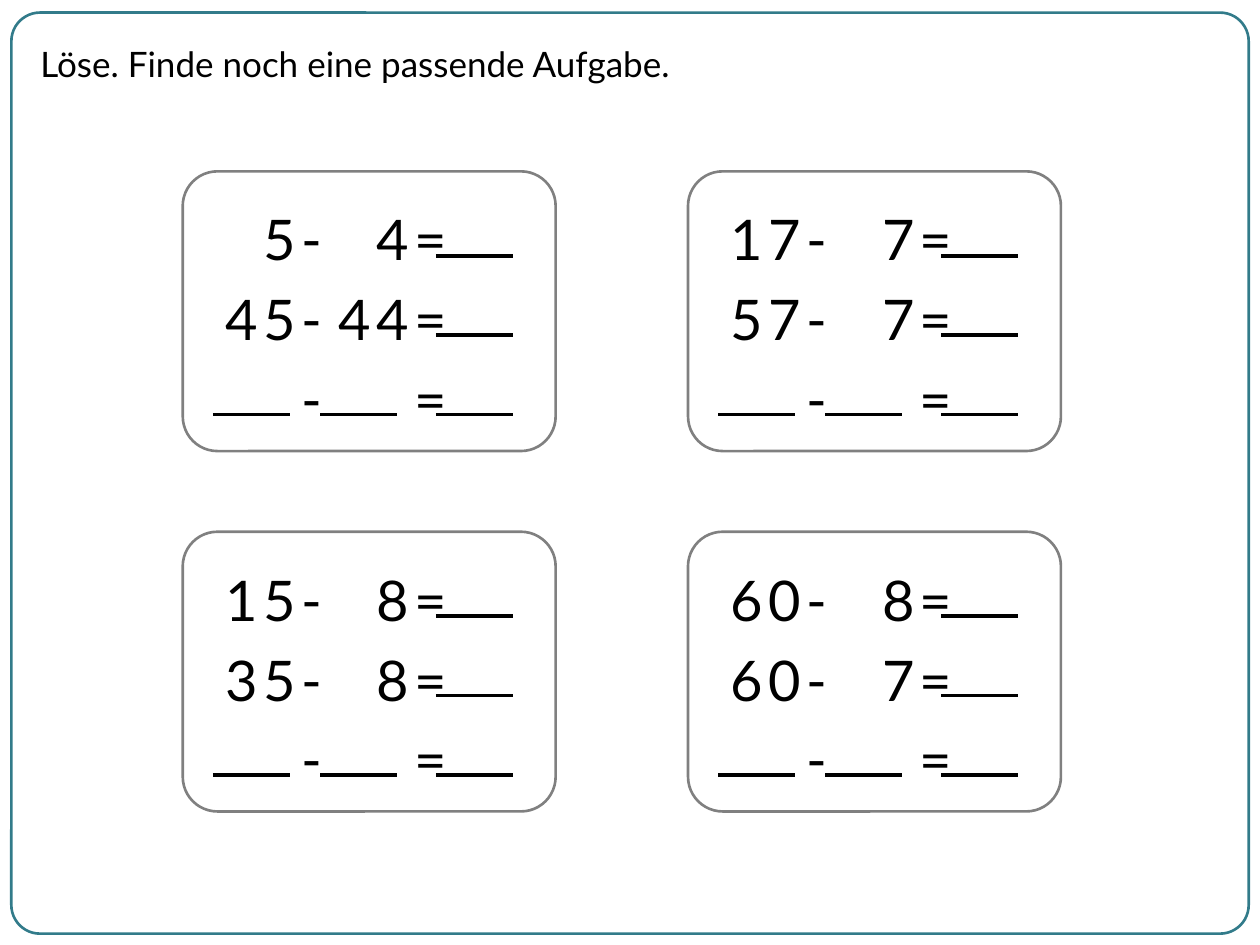
from dataclasses import dataclass

import pptx
import pptx.dml.color
import pptx.enum.shapes
import pptx.enum.text
import pptx.oxml
import pptx.util
from pptx.util import Inches


@dataclass(frozen=True)
class Theme:
    font: str = "Lato"
    ink: str = "000000"
    frame: str = "327B8A"
    card: str = "808080"
    title_size: int = 20
    digit_size: int = 32
    outline: float = 1.5
    blank_line: float = 2.25
    plain_table: str = "{2D5ABB26-0587-4C30-8999-92F81FD0307C}"


THEME = Theme()

# Card grid: table corners, and the two given tasks (minuend, subtrahend) of each card
LEFTS = (1.69, 5.7)
TOPS = (1.58, 4.44)
TASKS = (
    (((5, 4), (45, 44)), ((17, 7), (57, 7))),
    (((15, 8), (35, 8)), ((60, 8), (60, 7))),
)

# Measures within a card
COLUMNS, COLUMN_WIDTH = 8, 0.3
ROWS, ROW_HEIGHT = 3, 0.63
BLANK_WIDTH, BLANK_DROP = 0.61, 0.45
MINUEND_X, SUBTRAHEND_X, RESULT_X = 0, 0.85, 1.77
CARD_WIDTH, CARD_HEIGHT = 2.22, 2.96  # before the quarter turn


def color(code):
    return pptx.dml.color.RGBColor.from_string(code)


def write(text_frame, text, *, size, align):
    para = text_frame.paragraphs[0]
    para.alignment = align
    span = para.add_run()
    span.text = text
    span.font.name = THEME.font
    span.font.size = pptx.util.Pt(size)
    span.font.color.rgb = color(THEME.ink)


def add_title(slide, text):
    title = slide.shapes.title
    title.left, title.top = Inches(0.22), Inches(0.29)
    title.width, title.height = Inches(6.72), Inches(0.44)
    title.text_frame.word_wrap = True
    title.text_frame.auto_size = pptx.enum.text.MSO_AUTO_SIZE.SHAPE_TO_FIT_TEXT
    title.text_frame.vertical_anchor = pptx.enum.text.MSO_ANCHOR.TOP
    write(title.text_frame, text, size=THEME.title_size,
          align=pptx.enum.text.PP_ALIGN.LEFT)


def add_rounded_box(slide, left, top, width, height, *, line, radius, rotation=0):
    box = slide.shapes.add_shape(
        pptx.enum.shapes.MSO_SHAPE.ROUNDED_RECTANGLE,
        Inches(left), Inches(top), Inches(width), Inches(height))
    box.adjustments[0] = radius
    box.rotation = rotation
    box.shadow.inherit = False
    box.fill.background()
    box.line.color.rgb = color(line)
    box.line.width = pptx.util.Pt(THEME.outline)


def add_blank(slide, left, top):
    """Draw a line for the pupil to write on."""
    line = slide.shapes.add_connector(
        pptx.enum.shapes.MSO_CONNECTOR.STRAIGHT,
        Inches(left), Inches(top), Inches(left + BLANK_WIDTH), Inches(top))
    line.line.color.rgb = color(THEME.ink)
    line.line.width = pptx.util.Pt(THEME.blank_line)
    properties = line.element.spPr
    properties.append(properties.makeelement(pptx.oxml.ns.qn("a:effectLst"), {}))


def add_task_table(slide, left, top, tasks):
    frame = slide.shapes.add_table(
        ROWS, COLUMNS, Inches(left), Inches(top),
        Inches(COLUMNS * COLUMN_WIDTH), Inches(ROWS * ROW_HEIGHT))
    table = frame.table
    table.first_row = table.horz_banding = False
    style = table._tbl.tblPr.find(pptx.oxml.ns.qn("a:tableStyleId"))
    style.text = THEME.plain_table
    for column in table.columns:
        column.width = Inches(COLUMN_WIDTH)

    # One sign per cell; the last row leaves both numbers open
    for row, (minuend, subtrahend) in enumerate((*tasks, ("", ""))):
        signs = f"{minuend:>2}-{subtrahend:>2}=".ljust(COLUMNS)
        for column, sign in enumerate(signs):
            cell = table.cell(row, column)
            cell.fill.background()
            cell.vertical_anchor = pptx.enum.text.MSO_ANCHOR.MIDDLE
            if sign != " ":
                write(cell.text_frame, sign, size=THEME.digit_size,
                      align=pptx.enum.text.PP_ALIGN.CENTER)


def add_card(slide, left, top, tasks):
    add_task_table(slide, left, top, tasks)
    add_rounded_box(slide, left + 0.13, top - 0.59, CARD_WIDTH, CARD_HEIGHT,
                    line=THEME.card, radius=0.124, rotation=90)
    for row in range(ROWS):
        add_blank(slide, left + RESULT_X, top + BLANK_DROP + row * ROW_HEIGHT)
    last_line = top + BLANK_DROP + (ROWS - 1) * ROW_HEIGHT
    for offset in (MINUEND_X, SUBTRAHEND_X):
        add_blank(slide, left + offset, last_line)


def main():
    deck = pptx.Presentation()
    deck.slide_width, deck.slide_height = Inches(10), Inches(7.5)
    slide = deck.slides.add_slide(deck.slide_layouts.get_by_name("Title Only"))

    # Page frame and instruction
    add_rounded_box(slide, 0.09, 0.1, 9.82, 7.31, line=THEME.frame, radius=0.031)
    add_title(slide, "Löse. Finde noch eine passende Aufgabe.")

    # Task cards
    for top, card_row in zip(TOPS, TASKS):
        for left, tasks in zip(LEFTS, card_row):
            add_card(slide, left, top, tasks)

    deck.save("out.pptx")


if __name__ == "__main__":
    main()
